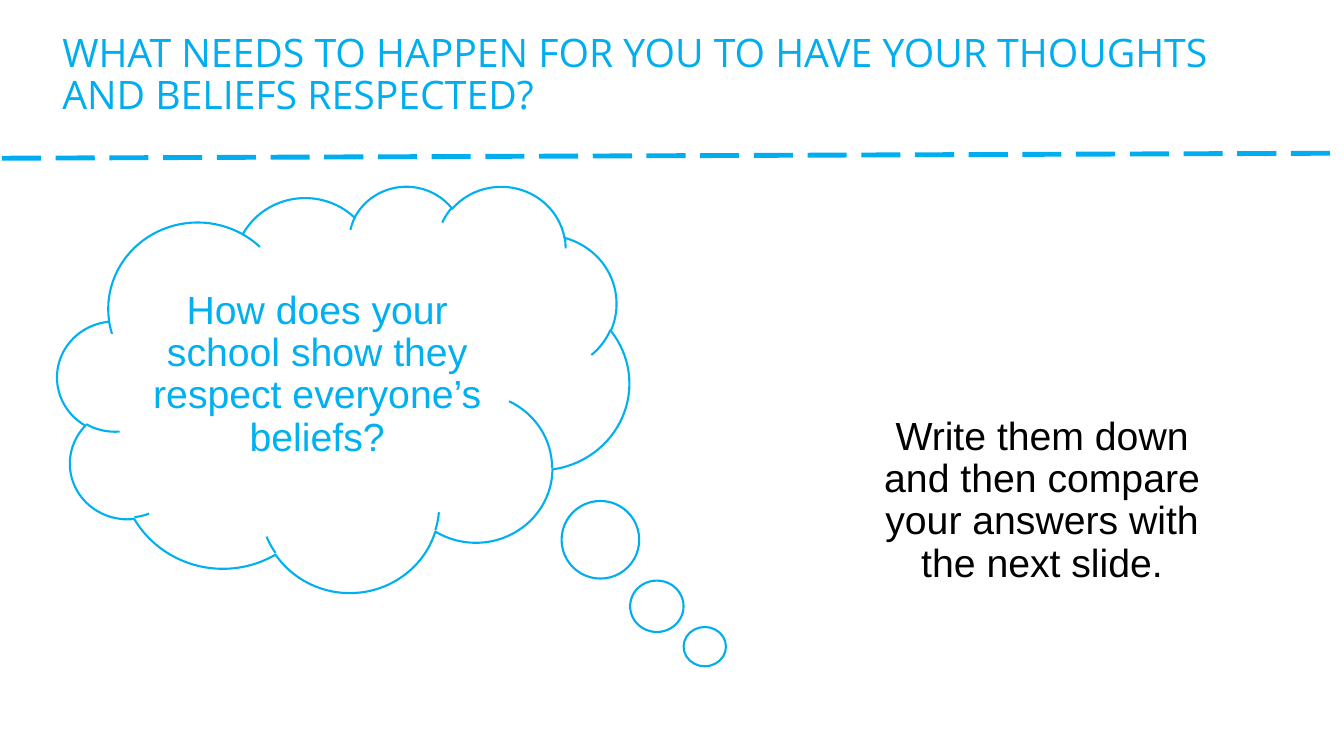
from lxml import etree
from pptx import Presentation
from pptx import util as u
from pptx.dml.color import RGBColor
from pptx.enum import dml, shapes, text
from pptx.oxml.ns import qn

PX = 9144  # one px is a hundredth of an inch
BLUE, SKY, BLACK = "00AEEF", "00B0F0", "000000"


def rgb(value):
    return RGBColor.from_string(value)


class SlideBuilder:
    size = 28
    line_spacing = 0.9

    def __init__(self, slide):
        self.shapes = slide.shapes

    def dashed_rule(self, start, end, color, weight):
        rule = self.shapes.add_connector(
            shapes.MSO_CONNECTOR.STRAIGHT, *(v * PX for v in start + end))
        rule.line.color.rgb = rgb(color)
        rule.line.width = u.Pt(weight)
        rule.line.dash_style = dml.MSO_LINE.LONG_DASH
        etree.SubElement(rule._element.spPr, qn("a:effectLst"))

    def outline(self, kind, box, color):
        shape = self.shapes.add_shape(kind, *(v * PX for v in box))
        shape.shadow.inherit = False
        shape.fill.background()
        shape.line.color.rgb = rgb(color)
        shape.line.width = u.Pt(1.5)

    def words(self, content, box, color, font="Arial", top=20,
              align=text.PP_ALIGN.CENTER, anchor=text.MSO_ANCHOR.TOP):
        frame = self.shapes.add_textbox(*(v * PX for v in box)).text_frame
        frame.word_wrap = True
        frame.vertical_anchor = anchor
        frame.margin_left = frame.margin_right = 10 * PX
        frame.margin_top, frame.margin_bottom = top * PX, 5 * PX
        paragraph = frame.paragraphs[0]
        paragraph.text = content
        paragraph.alignment = align
        paragraph.line_spacing = self.line_spacing
        paragraph.font.name = font
        paragraph.font.size = u.Pt(self.size)
        paragraph.font.color.rgb = rgb(color)


def main():
    deck = Presentation()
    deck.slide_width, deck.slide_height = 1333 * PX, 750 * PX
    page = SlideBuilder(deck.slides.add_slide(deck.slide_layouts[6]))

    # Heading and the rule under it
    page.dashed_rule((2, 157), (1333, 152), BLUE, 3.5)
    page.words("WHAT NEEDS TO HAPPEN FOR YOU TO HAVE YOUR THOUGHTS AND BELIEFS RESPECTED?",
               (52, 31, 1230, 91), BLUE, font="Open Sans", top=5,
               align=text.PP_ALIGN.LEFT, anchor=text.MSO_ANCHOR.BOTTOM)

    # Thought cloud with its trail of bubbles
    page.outline(shapes.MSO_SHAPE.CLOUD, (57, 184, 567, 403), SKY)
    for bubble in ((557, 497, 77, 77), (625, 576, 53, 51), (678, 622, 42, 39)):
        page.outline(shapes.MSO_SHAPE.OVAL, bubble, BLUE)

    # Question and instruction
    page.words("How does your school show they respect everyone’s beliefs?",
               (139, 268, 351, 268), SKY)
    page.words("Write them down and then compare your answers with the next slide.",
               (858, 393, 351, 268), BLACK)

    deck.save("out.pptx")


if __name__ == "__main__":
    main()
